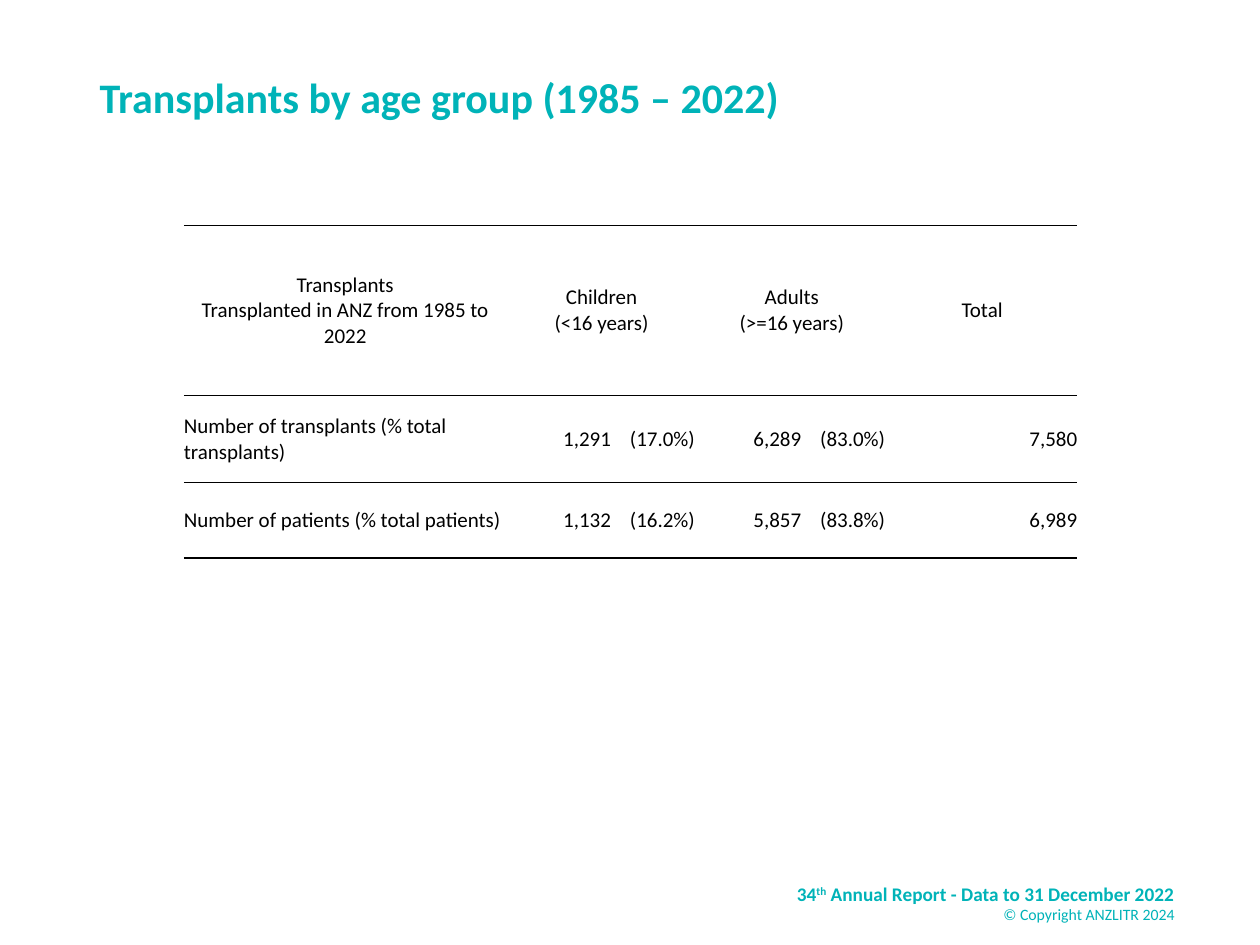
from lxml import etree
from pptx import Presentation
from pptx.dml.color import RGBColor
from pptx.enum.text import MSO_ANCHOR, PP_ALIGN
from pptx.oxml.ns import qn
from pptx.util import Inches, Pt

TEAL, BLACK = "00B3B8", "000000"


def style(font, size, color, bold=False):
    font.name, font.size, font.bold = "Calibri", Pt(size), bold
    font.color.rgb = RGBColor.from_string(color)


def set_borders(cell, top, bottom):
    """Give the cell black 1 pt rules where asked and no other lines."""
    tcPr = cell._tc.get_or_add_tcPr()
    sides = (("lnL", False), ("lnR", False), ("lnT", top), ("lnB", bottom))
    for i, (side, drawn) in enumerate(sides):
        ln = etree.Element(qn(f"a:{side}"), w=str(Pt(1)))
        if drawn:
            fill = etree.SubElement(ln, qn("a:solidFill"))
            etree.SubElement(fill, qn("a:srgbClr"), val=BLACK)
        else:
            etree.SubElement(ln, qn("a:noFill"))
        tcPr.insert(i, ln)


prs = Presentation()
prs.slide_width, prs.slide_height = Inches(10), Inches(7.5)
s = prs.slides.add_slide(prs.slide_layouts[5])

# Title
title = s.shapes.title
title.left, title.top = Inches(0.69), Inches(0.27)
title.width, title.height = Inches(8.62), Inches(1.05)
tf = title.text_frame
tf.text = "Transplants by age group (1985 – 2022)"
tf.vertical_anchor = MSO_ANCHOR.MIDDLE
p = tf.paragraphs[0]
p.alignment, p.line_spacing = PP_ALIGN.LEFT, 0.9
style(p.runs[0].font, 24, TEAL, True)

# Table
rows = [
    ["Transplants\nTransplanted in ANZ from 1985 to 2022",
     "Children\n(<16 years)", "Adults\n(>=16 years)", "Total"],
    ["Number of transplants (% total transplants)",
     "1,291\t(17.0%)", "6,289\t(83.0%)", "7,580"],
    ["Number of patients (% total patients)",
     "1,132\t(16.2%)", "5,857\t(83.8%)", "6,989"],
]
col_widths = [2.56, 1.51, 1.51, 1.51]
row_heights = [1.35, 0.69, 0.6]
table = s.shapes.add_table(3, 4, Inches(1.46), Inches(1.79),
                           Inches(sum(col_widths)), Inches(sum(row_heights))).table
table.first_row = table.horz_banding = False
for col, width in zip(table.columns, col_widths):
    col.width = Inches(width)
for row, height in zip(table.rows, row_heights):
    row.height = Inches(height)

for i, row in enumerate(rows):
    for j, text in enumerate(row):
        cell = table.cell(i, j)
        cell.text = text
        cell.fill.background()
        cell.vertical_anchor = MSO_ANCHOR.MIDDLE
        cell.margin_left = cell.margin_right = 0
        cell.margin_top = cell.margin_bottom = 0
        set_borders(cell, True, True)
        for p in cell.text_frame.paragraphs:
            p.alignment = PP_ALIGN.CENTER if i == 0 else PP_ALIGN.LEFT
            if i > 0 and j == 3:
                p.alignment = PP_ALIGN.RIGHT
            if "\t" in text:
                cell.margin_left = Inches(0.45)
                tabs = etree.SubElement(p._p.get_or_add_pPr(), qn("a:tabLst"))
                etree.SubElement(tabs, qn("a:tab"), pos=str(Inches(0.53)), algn="l")
            for r in p.runs:
                style(r.font, 12, BLACK)

# Footer
tf = s.shapes.add_textbox(Inches(6.05), Inches(6.95), Inches(3.37), Inches(0.4)).text_frame
tf.word_wrap = True
p = tf.paragraphs[0]
p.alignment = PP_ALIGN.RIGHT
for text in ("34", "th", " Annual Report - Data to 31 December 2022"):
    r = p.add_run()
    r.text = text
    style(r.font, 11, TEAL, True)
p.runs[1].font._element.set("baseline", "30000")
p = tf.add_paragraph()
p.text = "© Copyright ANZLITR 2024"
p.alignment = PP_ALIGN.RIGHT
style(p.runs[0].font, 9, TEAL)

prs.save("out.pptx")
